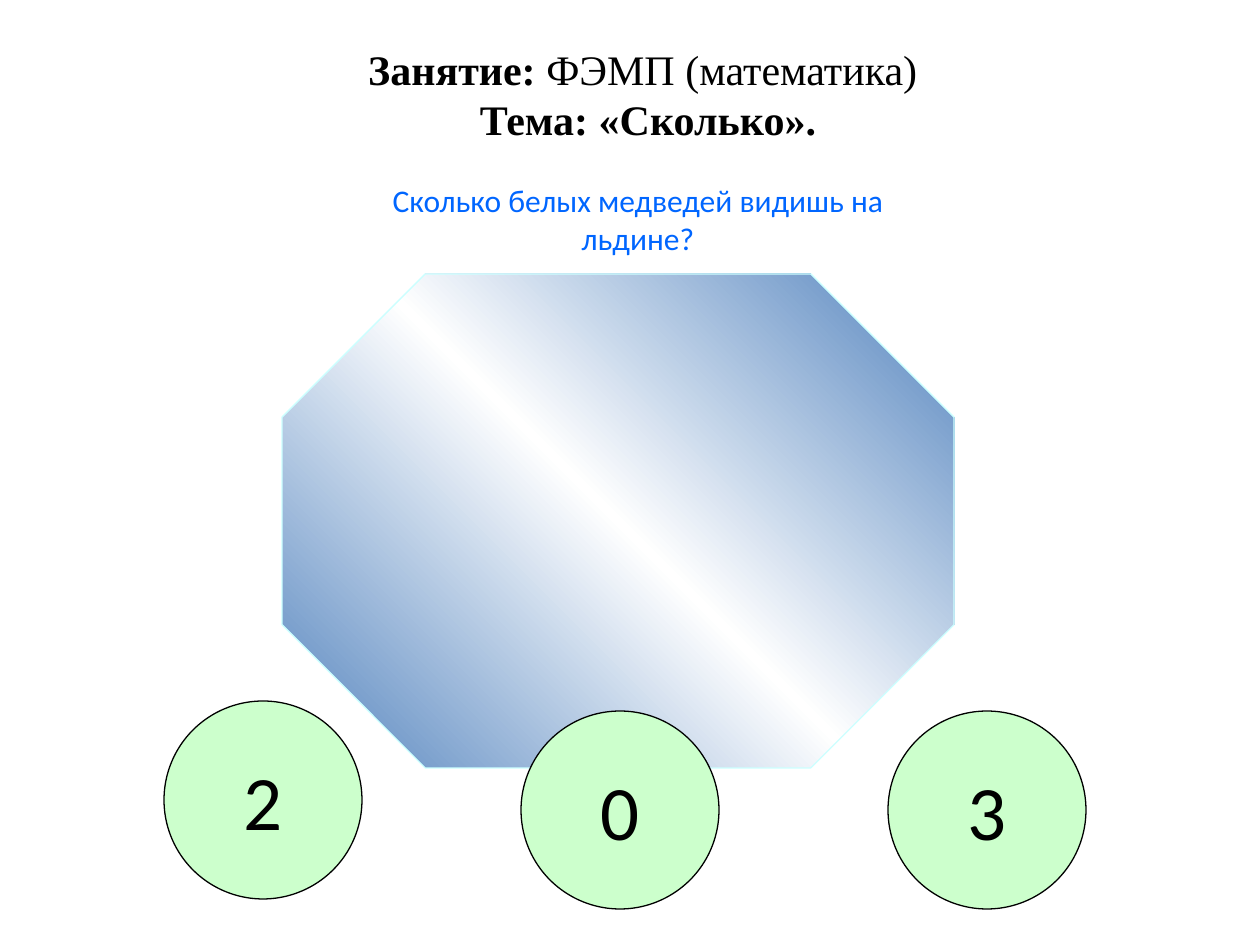
from copy import deepcopy

from pptx import Presentation
from pptx.dml.color import RGBColor
from pptx.enum.shapes import MSO_SHAPE
from pptx.enum.text import MSO_ANCHOR, PP_ALIGN
from pptx.oxml.ns import qn
from pptx.util import Emu, Pt

CENTER = PP_ALIGN.CENTER
MIDDLE = MSO_ANCHOR.MIDDLE
OCTAGON = MSO_SHAPE.OCTAGON
OVAL = MSO_SHAPE.OVAL

THEME = {
    "title": {"name": "Times New Roman", "size": Pt(24), "color": "000000"},
    "question": {"name": "Calibri", "size": Pt(18), "color": "0066FF"},
    "answer": {"name": "Calibri", "size": Pt(44), "color": "000000"},
    "floe": ["4F81BD", "FFFFFF", "4F81BD"],
    "floe_line": "CCFFFF",
    "circle": "CCFFCC",
    "circle_line": "000000",
    "line_width": Pt(0.75),
}


def px(n):
    """Turn whole px into EMU at 126 px to the inch."""
    return Emu(round(n * 914400 / 126))


def add_run(p, text, style, bold=False):
    """Add one run in a theme text style."""
    r = p.add_run()
    r.text = text
    for key, value in {**style, "bold": bold}.items():
        if key == "color":
            r.font.color.rgb = RGBColor.from_string(value)
        else:
            setattr(r.font, key, value)


def add_text(slide, box, lines, style):
    """Add a centred text box from lines of (text, bold) runs."""
    tf = slide.shapes.add_textbox(*map(px, box)).text_frame
    tf.word_wrap = True
    for i, line in enumerate(lines):
        p = tf.add_paragraph() if i else tf.paragraphs[0]
        p.alignment = CENTER
        for text, bold in line:
            add_run(p, text, style, bold)


def add_outlined(slide, kind, box, line):
    """Add a preset shape with a thin outline and no shadow."""
    s = slide.shapes.add_shape(kind, *map(px, box))
    s.shadow.inherit = False
    s.line.color.rgb = RGBColor.from_string(line)
    s.line.width = THEME["line_width"]
    return s


def add_floe(slide, box):
    """Draw the ice floe with a diagonal three-stop gradient."""
    s = add_outlined(slide, OCTAGON, box, THEME["floe_line"])
    s.adjustments[0] = 0.29
    s.fill.gradient()
    s.fill.gradient_angle = 45
    stops = s._element.spPr.find(qn("a:gradFill")).find(qn("a:gsLst"))
    stops.insert(1, deepcopy(stops[0]))
    for i, (stop, color) in enumerate(zip(s.fill.gradient_stops, THEME["floe"])):
        stop.position = i / 2
        stop.color.rgb = RGBColor.from_string(color)


def add_answer(slide, box, digit):
    """Draw one answer circle with its digit."""
    s = add_outlined(slide, OVAL, box, THEME["circle_line"])
    s.fill.solid()
    s.fill.fore_color.rgb = RGBColor.from_string(THEME["circle"])
    tf = s.text_frame
    tf.word_wrap = False
    tf.vertical_anchor = MIDDLE
    p = tf.paragraphs[0]
    p.alignment = CENTER
    add_run(p, digit, THEME["answer"])


def add_answers(slide, box, answers):
    """Place the answer circles at their offsets inside the box."""
    left, top, _, height = box
    size = height - 10
    for dx, dy, digit in answers:
        add_answer(slide, (left + dx, top + dy, size, size), digit)


def main():
    """Build and save the counting slide."""
    prs = Presentation()
    prs.slide_width, prs.slide_height = px(1260), px(945)
    slide = prs.slides.add_slide(prs.slide_layouts[6])
    title = [
        [("Занятие: ", True), ("ФЭМП (математика) ", False)],
        [("Тема: «Сколько».", True)],
    ]
    question = [[("Сколько белых медведей видишь на льдине?", False)]]
    add_text(slide, (333, 37, 630, 115), title, THEME["title"])
    add_text(slide, (323, 175, 630, 89), question, THEME["question"])
    add_floe(slide, (282, 274, 672, 494))
    answers = [(0, 0, "2"), (357, 10, "0"), (724, 10, "3")]
    add_answers(slide, (164, 701, 922, 208), answers)
    prs.save("out.pptx")


if __name__ == "__main__":
    main()
